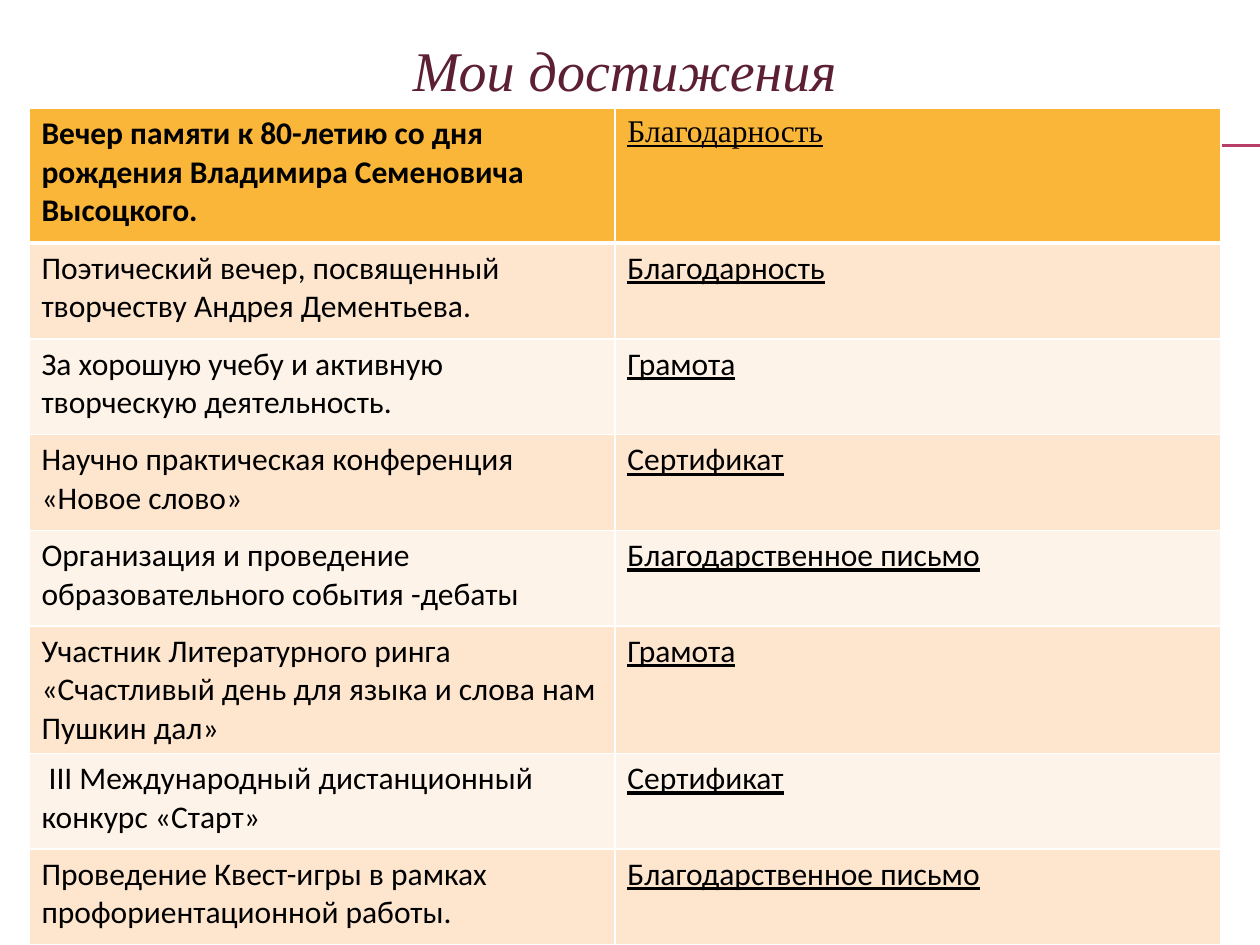
"""Build the slide with a title and a table of awards."""
from lxml import etree
from pptx import Presentation
from pptx.dml.color import RGBColor
from pptx.enum import shapes, text
from pptx.oxml import ns
from pptx.util import Inches, Pt

PLUM = RGBColor(0x5C, 0x1F, 0x34)
ROSE = RGBColor(0xB8, 0x3D, 0x68)
BLACK = RGBColor(0, 0, 0)
WHITE = RGBColor(0xFF, 0xFF, 0xFF)
GOLD = RGBColor(0xF9, 0xB6, 0x39)
PEACH = RGBColor(0xFD, 0xE5, 0xCE)
CREAM = RGBColor(0xFE, 0xF3, 0xE8)

AWARDS = [
    ("Вечер памяти к 80-летию со дня рождения Владимира Семеновича Высоцкого.", "Благодарность", 1.07),
    ("Поэтический вечер, посвященный творчеству Андрея Дементьева.", "Благодарность", 0.76),
    ("За хорошую учебу и активную творческую деятельность.", "Грамота", 0.76),
    ("Научно практическая конференция «Новое слово»", "Сертификат", 0.76),
    ("Организация и проведение образовательного события -дебаты", "Благодарственное письмо", 0.76),
    ("Участник Литературного ринга «Счастливый день для языка и слова нам Пушкин дал»", "Грамота", 1.01),
    (" III Международный дистанционный конкурс «Старт»", "Сертификат", 0.76),
    ("Проведение Квест-игры в рамках профориентационной работы.", "Благодарственное письмо", 0.76),
]


def write(frame, words, color, style):
    run = frame.paragraphs[0].add_run()
    run.text = words
    run.font.color.rgb = color
    for key, value in style.items():
        setattr(run.font, key, value)


def edge(cell, side, width):
    props = cell._tc.get_or_add_tcPr()
    line = etree.SubElement(props, ns.qn(f"a:{side}"), w=str(Pt(width)))
    fill = etree.SubElement(line, ns.qn("a:solidFill"))
    etree.SubElement(fill, ns.qn("a:srgbClr"), val=str(WHITE))


deck = Presentation()
deck.slide_width, deck.slide_height = Inches(10), Inches(7.5)
slide = deck.slides.add_slide(deck.slide_layouts[6])

for y in (1.15, 1.16):
    rule = slide.shapes.add_connector(
        shapes.MSO_CONNECTOR.STRAIGHT, Inches(0.56), Inches(y), Inches(10), Inches(y))
    rule.line.color.rgb = ROSE
    rule.line.width = Pt(0.75)
    etree.SubElement(rule._element.spPr, ns.qn("a:effectLst"))

title = slide.shapes.add_textbox(Inches(2.03), Inches(0.23), Inches(5.86), Inches(1.18))
title.text_frame.word_wrap = True
title.text_frame.paragraphs[0].alignment = text.PP_ALIGN.CENTER
write(title.text_frame, "Мои достижения", PLUM,
      {"name": "Times New Roman", "size": Pt(32), "italic": True})

grid = slide.shapes.add_table(
    len(AWARDS), 2, Inches(0.23), Inches(0.86), Inches(9.46), Inches(6.64)).table
for col, width in zip(grid.columns, (4.65, 4.81)):
    col.width = Inches(width)

for i, (event, award, height) in enumerate(AWARDS):
    grid.rows[i].height = Inches(height)
    head = i == 0
    shade = GOLD if head else PEACH if i % 2 else CREAM
    for j, words in enumerate((event, award)):
        cell = grid.cell(i, j)
        for side in ("lnL", "lnR", "lnT", "lnB"):
            thick = (head and side == "lnB") or (i == 1 and side == "lnT")
            edge(cell, side, 3 if thick else 1)
        cell.fill.solid()
        cell.fill.fore_color.rgb = shade
        write(cell.text_frame, words, BLACK, {
            "name": "Times New Roman" if head and j else "Calibri",
            "size": Pt(18),
            "bold": head and j == 0,
            "underline": j == 1,
        })

deck.save("out.pptx")
